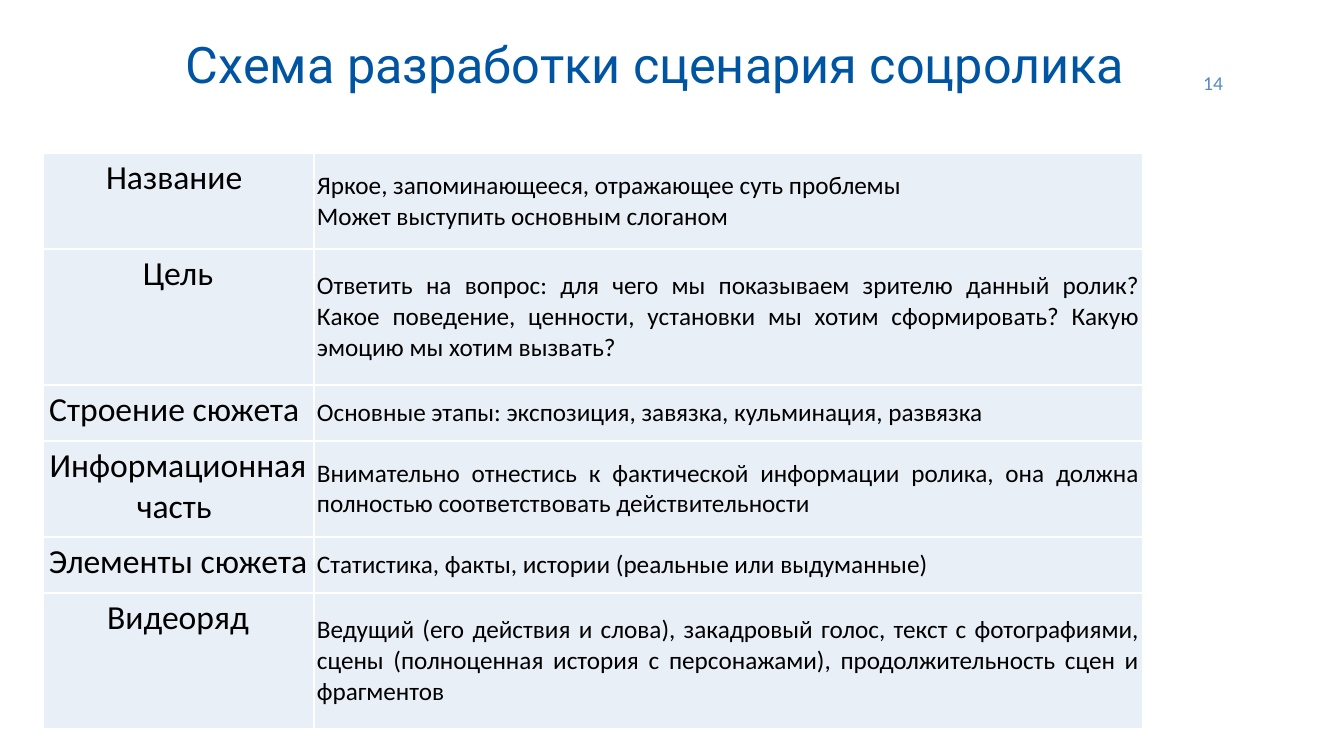
"""Build the slide with the outline of a social video script."""
from lxml.etree import SubElement
from pptx import Presentation
from pptx.dml.color import RGBColor
from pptx.enum.text import MSO_ANCHOR, PP_ALIGN
from pptx.oxml.ns import qn
from pptx.util import Emu, Pt

EMU_PER_PX = 914400 / 100.8


def px(length):
    return Emu(round(length * EMU_PER_PX))


def style(paragraph, font_name, size, color, alignment):
    paragraph.alignment = alignment
    paragraph.font.name = font_name
    paragraph.font.size = Pt(size)
    paragraph.font.color.rgb = RGBColor.from_string(color)


presentation = Presentation()
presentation.slide_width = px(1344)
presentation.slide_height = px(756)
slide = presentation.slides.add_slide(presentation.slide_layouts[6])

headings = [
    ("Схема разработки сценария соцролика", (176, 25, 967, 76), "Roboto", 36, "0055A3", PP_ALIGN.LEFT),
    ("14", (1158, 64, 75, 37), "Calibri", 14, "5388CA", PP_ALIGN.RIGHT),
]
for text, box, font_name, size, color, alignment in headings:
    text_frame = slide.shapes.add_textbox(*map(px, box)).text_frame
    text_frame.word_wrap = True
    text_frame.vertical_anchor = MSO_ANCHOR.MIDDLE
    text_frame.text = text
    style(text_frame.paragraphs[0], font_name, size, color, alignment)

script_parts = [
    (96, "Название ", "Яркое, запоминающееся, отражающее суть проблемы\nМожет выступить основным слоганом"),
    (136, "Цель", "Ответить на вопрос: для чего мы показываем зрителю данный ролик? "
     "Какое поведение, ценности, установки мы хотим сформировать? Какую эмоцию мы хотим вызвать?"),
    (56, "Строение сюжета ", "Основные этапы: экспозиция, завязка, кульминация, развязка"),
    (96, "Информационная часть ", "Внимательно отнестись к фактической информации ролика, "
     "она должна полностью соответствовать действительности"),
    (56, "Элементы сюжета", "Статистика, факты, истории (реальные или выдуманные)"),
    (136, "Видеоряд", "Ведущий (его действия и слова), закадровый голос, текст с фотографиями, "
     "сцены (полноценная история с персонажами), продолжительность сцен и фрагментов"),
]
column_widths = [271, 829]
column_styles = [
    (24, PP_ALIGN.CENTER, MSO_ANCHOR.TOP),
    (18, PP_ALIGN.JUSTIFY, MSO_ANCHOR.MIDDLE),
]
table_height = sum(height for height, *_ in script_parts)
table = slide.shapes.add_table(
    len(script_parts), len(column_widths), px(43), px(153), px(sum(column_widths)), px(table_height)
).table
for column, width in zip(table.columns, column_widths):
    column.width = px(width)

for row, (height, *texts) in zip(table.rows, script_parts):
    row.height = px(height)
    for cell, text, (size, alignment, anchor) in zip(row.cells, texts, column_styles):
        cell.text = text
        cell.vertical_anchor = anchor
        cell.margin_left, cell.margin_right = px(3), px(4)
        cell.margin_top = cell.margin_bottom = px(5)
        for paragraph in cell.text_frame.paragraphs:
            style(paragraph, "Calibri", size, "000000", alignment)
        cell_properties = cell._tc.get_or_add_tcPr()
        for side in ("a:lnL", "a:lnR", "a:lnT", "a:lnB"):
            border = SubElement(cell_properties, qn(side), w=str(Pt(0.96)))
            border_fill = SubElement(border, qn("a:solidFill"))
            SubElement(border_fill, qn("a:srgbClr"), val="FFFFFF")
        cell.fill.solid()
        cell.fill.fore_color.rgb = RGBColor.from_string("E9EFF7")
        cell_properties.append(cell_properties.find(qn("a:solidFill")))

presentation.save("out.pptx")
